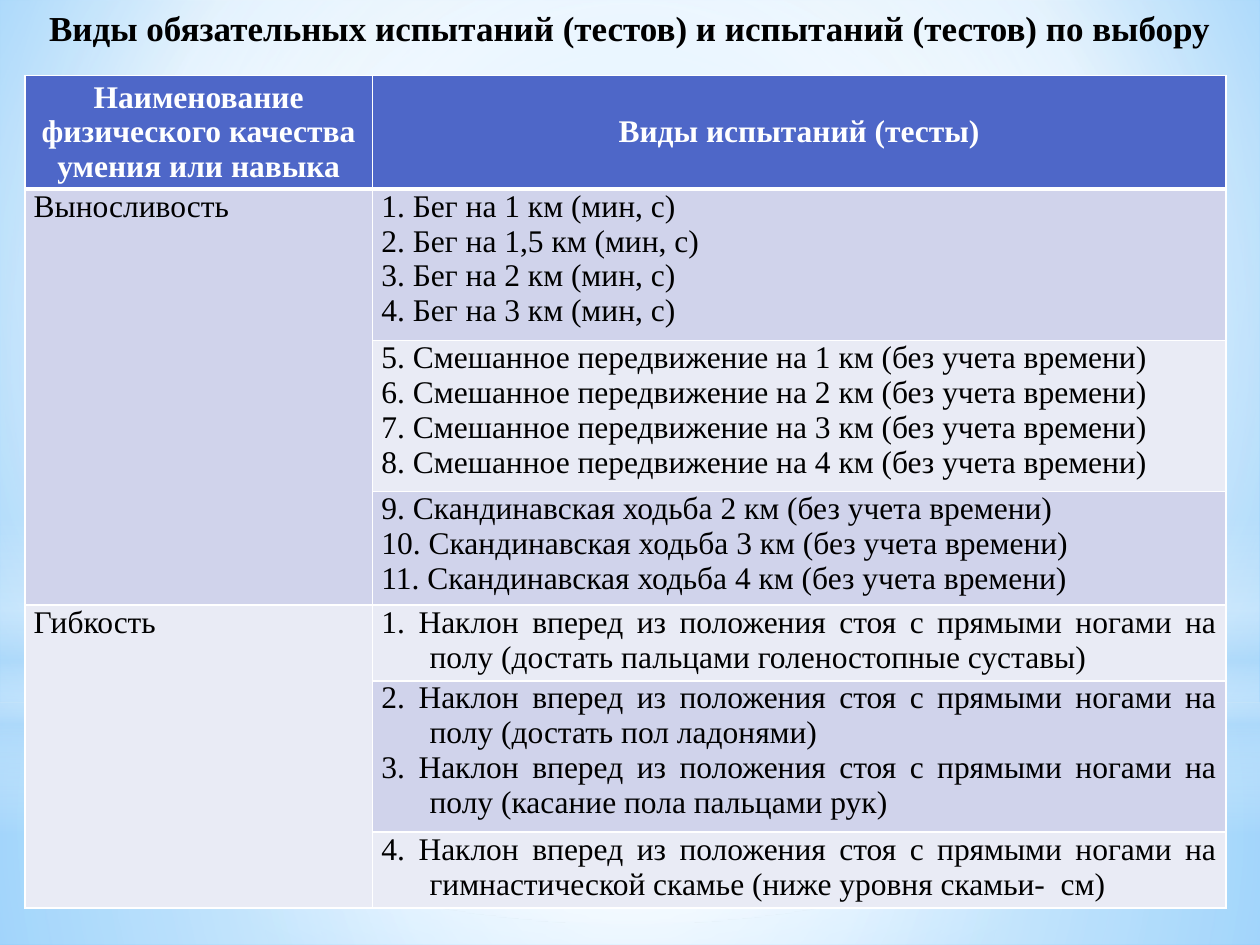
from lxml.etree import SubElement
from pptx import Presentation
from pptx.dml.color import RGBColor
from pptx.enum.shapes import MSO_SHAPE
from pptx.enum.text import MSO_ANCHOR, PP_ALIGN
from pptx.oxml.ns import qn
from pptx.util import Cm, Pt

WIDTH, HEIGHT = 25.4, 19.05
WHITE, SKY, BLUE, LILAC, PALE = "FFFFFF", "B4DCFA", "4E67C8", "D0D3EB", "E9EBF5"


def color(code):
    return RGBColor.from_string(code)


class SlideBuilder:
    font = "Times New Roman"
    body_size = 18
    hanging = 0.97

    def __init__(self, deck):
        self.slide = deck.slides.add_slide(deck.slide_layouts[6])

    def gradient(self, properties, stops, focus=None, angle=0):
        """Replace a solid fill by a gradient of (position, colour, opacity) stops."""
        solid = properties.find(qn("a:solidFill"))
        fill = properties.makeelement(qn("a:gradFill"), {"rotWithShape": "1"})
        properties.replace(solid, fill)
        stop_list = SubElement(fill, qn("a:gsLst"))
        for position, code, opacity in stops:
            stop = SubElement(stop_list, qn("a:gs"), pos=str(position * 1000))
            tint = SubElement(stop, qn("a:srgbClr"), val=code)
            if opacity < 100:
                SubElement(tint, qn("a:alpha"), val=str(opacity * 1000))
        if focus:
            circle = SubElement(fill, qn("a:path"), {"path": "circle"})
            sides = {side: str(part * 1000) for side, part in zip("ltrb", focus)}
            SubElement(circle, qn("a:fillToRect"), sides)
        else:
            SubElement(fill, qn("a:lin"), ang=str(angle * 60000), scaled="0")

    def background(self, stops, focus):
        self.slide.background.fill.solid()
        properties = self.slide.element.find(".//" + qn("p:bgPr"))
        self.gradient(properties, stops, focus)

    def glow(self, kind, top, height, stops, focus=None, angle=0):
        shape = self.slide.shapes.add_shape(kind, 0, Cm(top), Cm(WIDTH), Cm(height))
        shape.shadow.inherit = False
        shape.line.fill.background()
        shape.fill.solid()
        self.gradient(shape.element.spPr, stops, focus, angle)

    def add_text(self, para, text, size, code, bold, align):
        para.alignment = align
        span = para.add_run()
        span.text = text
        span.font.name = self.font
        span.font.size = Pt(size)
        span.font.bold = bold
        span.font.color.rgb = color(code)

    def title(self, text, height):
        box = self.slide.shapes.add_textbox(0, 0, Cm(WIDTH), Cm(height))
        frame = box.text_frame
        frame.word_wrap = True
        frame.vertical_anchor = MSO_ANCHOR.MIDDLE
        self.add_text(frame.paragraphs[0], text, 20, "000000", True, PP_ALIGN.CENTER)

    def table(self, left, top, widths, heights):
        frame = self.slide.shapes.add_table(
            len(heights), len(widths), Cm(left), Cm(top),
            Cm(sum(widths)), Cm(sum(heights)))
        for column, width in zip(frame.table.columns, widths):
            column.width = Cm(width)
        for row, height in zip(frame.table.rows, heights):
            row.height = Cm(height)
        return frame.table

    def cell(self, cell, lines, fill, header=False, hanging=False):
        cell.margin_left = cell.margin_right = Cm(0.18)
        cell.margin_top = cell.margin_bottom = 0
        cell.vertical_anchor = MSO_ANCHOR.MIDDLE if header else MSO_ANCHOR.TOP
        properties = cell._tc.get_or_add_tcPr()
        for side in "LRTB":
            width = Pt(3 if header and side == "B" else 1)
            border = SubElement(properties, qn("a:ln" + side), w=str(width))
            SubElement(SubElement(border, qn("a:solidFill")), qn("a:srgbClr"), val=WHITE)
        cell.fill.solid()
        cell.fill.fore_color.rgb = color(fill)
        frame = cell.text_frame
        for number, line in enumerate(lines):
            para = frame.add_paragraph() if number else frame.paragraphs[0]
            self.add_text(para, line, self.body_size, WHITE if header else "000000", header,
                          PP_ALIGN.CENTER if header else PP_ALIGN.JUSTIFY)
            if hanging:
                indent = Cm(self.hanging)
                settings = para._p.get_or_add_pPr()
                settings.set("marL", str(indent))
                settings.set("indent", str(-indent))


BEND = "Наклон вперед из положения стоя с прямыми ногами на "
TIMELESS = "км (без учета времени)"
HEADERS = ["Наименование физического качества умения или навыка", "Виды испытаний (тесты)"]
# Each quality with its groups of tests
QUALITIES = [
    ("Выносливость", [
        [f"{n}. Бег на {km} км (мин, с)" for n, km in enumerate(["1", "1,5", "2", "3"], 1)],
        [f"{km + 4}. Смешанное передвижение на {km} {TIMELESS}" for km in range(1, 5)],
        [f"{km + 7}. Скандинавская ходьба {km} {TIMELESS}" for km in range(2, 5)],
    ]),
    ("Гибкость", [
        [f"1. {BEND}полу (достать пальцами голеностопные суставы)"],
        [f"2. {BEND}полу (достать пол ладонями)",
         f"3. {BEND}полу (касание пола пальцами рук)"],
        [f"4. {BEND}гимнастической скамье (ниже уровня скамьи-  см)"],
    ]),
]


def main():
    deck = Presentation()
    deck.slide_width, deck.slide_height = Cm(WIDTH), Cm(HEIGHT)
    page = SlideBuilder(deck)

    # Sky background with soft glows
    center = (50, 50, 50, 50)
    page.background([(0, "9ED5FF", 100), (60, WHITE, 100), (100, "5BB9FF", 100)],
                    (20, 10, 20, 60))
    horizon = 14.17
    page.glow(MSO_SHAPE.RECTANGLE, horizon, HEIGHT - horizon,
              [(0, WHITE, 91), (37, WHITE, 76), (100, SKY, 79)], center)
    page.glow(MSO_SHAPE.RECTANGLE, 0, horizon,
              [(0, WHITE, 89), (48, WHITE, 62), (100, SKY, 79)], center)
    page.glow(MSO_SHAPE.RECTANGLE, 10.46, 6.35,
              [(0, WHITE, 0), (29, WHITE, 30), (45, SKY, 40), (55, WHITE, 26),
               (65, SKY, 60), (100, WHITE, 0)], angle=90)
    page.glow(MSO_SHAPE.OVAL, 4.45, horizon, [(0, WHITE, 100), (56, WHITE, 0)], center)

    # Title
    page.title("Виды обязательных испытаний (тестов) и испытаний (тестов) по выбору", 1.11)

    # Table of tests
    low, middle, high = 1.52, 2.29, 3.05
    table = page.table(0.5, 1.52, [7.01, 17.2],
                       [middle, high, high, middle, low, high, low])
    for column, header in enumerate(HEADERS):
        page.cell(table.cell(0, column), [header], BLUE, header=True)
    row = 1
    for quality, groups in QUALITIES:
        first = row
        for lines in groups:
            band = LILAC if row % 2 else PALE
            page.cell(table.cell(row, 0), [quality] if row == first else [], band)
            page.cell(table.cell(row, 1), lines, band, hanging=True)
            row += 1
        table.cell(first, 0).merge(table.cell(row - 1, 0))

    deck.save("out.pptx")


if __name__ == "__main__":
    main()
